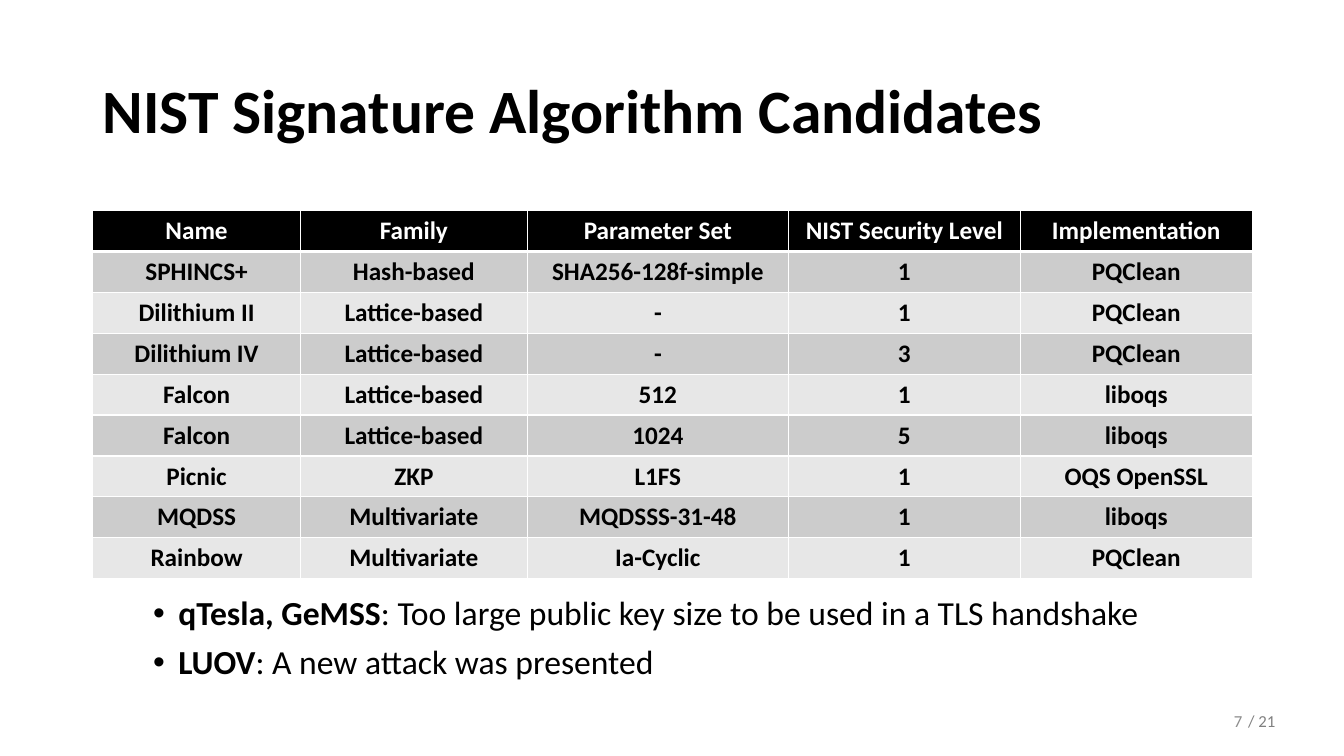
from lxml import etree
from pptx import Presentation
from pptx.dml.color import RGBColor
from pptx.enum.text import MSO_ANCHOR, PP_ALIGN
from pptx.oxml.ns import qn
from pptx.util import Inches, Pt

BLACK = RGBColor(0x00, 0x00, 0x00)
WHITE = RGBColor(0xFF, 0xFF, 0xFF)
DARK_BAND = RGBColor(0xCC, 0xCC, 0xCC)
LIGHT_BAND = RGBColor(0xE7, 0xE7, 0xE7)
PAGE_GRAY = RGBColor(0x8C, 0x8C, 0x8C)
TOTAL_GRAY = RGBColor(0x80, 0x80, 0x80)

CANDIDATES = [
    ("Name", "Family", "Parameter Set", "NIST Security Level", "Implementation"),
    ("SPHINCS+", "Hash-based", "SHA256-128f-simple", "1", "PQClean"),
    ("Dilithium II", "Lattice-based", "-", "1", "PQClean"),
    ("Dilithium IV", "Lattice-based", "-", "3", "PQClean"),
    ("Falcon", "Lattice-based", "512", "1", "liboqs"),
    ("Falcon", "Lattice-based", "1024", "5", "liboqs"),
    ("Picnic", "ZKP", "L1FS", "1", "OQS OpenSSL"),
    ("MQDSS", "Multivariate", "MQDSSS-31-48", "1", "liboqs"),
    ("Rainbow", "Multivariate", "Ia-Cyclic", "1", "PQClean"),
]
COLUMN_WIDTHS = [2.06, 2.25, 2.59, 2.3, 2.3]
EXCLUSIONS = [
    ("qTesla, GeMSS", ": Too large public key size to be used in a TLS handshake"),
    ("LUOV", ": A new attack was presented"),
]


def style(paragraph, size, color, bold=None):
    paragraph.font.name = "Calibri"
    paragraph.font.size = Pt(size)
    paragraph.font.color.rgb = color
    paragraph.font.bold = bold


def add_border(cell, side, width):
    """Add a solid white line to one side (L, R, T or B) of a cell."""
    line = etree.SubElement(cell._tc.get_or_add_tcPr(), qn(f"a:ln{side}"), w=str(Pt(width)))
    fill = etree.SubElement(line, qn("a:solidFill"))
    etree.SubElement(fill, qn("a:srgbClr"), val=str(WHITE))


presentation = Presentation()
presentation.slide_width = Inches(13.33)
presentation.slide_height = Inches(7.5)
slide = presentation.slides.add_slide(presentation.slide_layouts[6])

# Title
title = slide.shapes.add_textbox(Inches(0.92), Inches(0.4), Inches(11.5), Inches(1.45)).text_frame
title.word_wrap = True
title.vertical_anchor = MSO_ANCHOR.MIDDLE
heading = title.paragraphs[0]
heading.text = "NIST Signature Algorithm Candidates"
heading.line_spacing = 0.9
style(heading, 44, BLACK, True)

# Excluded candidates
exclusions = slide.shapes.add_textbox(
    Inches(0.92), Inches(5.88), Inches(11.5), Inches(1.02)).text_frame
exclusions.word_wrap = True
for index, (scheme, reason) in enumerate(EXCLUSIONS):
    bullet = exclusions.add_paragraph() if index else exclusions.paragraphs[0]
    bullet.line_spacing = Pt(25)
    bullet.space_before = Pt(10)
    properties = bullet._p.get_or_add_pPr()
    properties.set("marL", str(Inches(0.75)))
    properties.set("indent", str(Inches(-0.25)))
    etree.SubElement(properties, qn("a:buFont"), typeface="Arial")
    etree.SubElement(properties, qn("a:buChar"), char="•")
    style(bullet, 24, BLACK)
    for text, bold in ((scheme, True), (reason, False)):
        run = bullet.add_run()
        run.text = text
        run.font.bold = bold

# Page number and total
page = slide.shapes.add_textbox(Inches(9.42), Inches(6.95), Inches(3), Inches(0.4)).text_frame
page.word_wrap = True
page.vertical_anchor = MSO_ANCHOR.MIDDLE
page.paragraphs[0].text = "7"
page.paragraphs[0].alignment = PP_ALIGN.RIGHT
style(page.paragraphs[0], 12, PAGE_GRAY)

total = slide.shapes.add_textbox(Inches(12.28), Inches(7), Inches(0.48), Inches(0.3)).text_frame
total.word_wrap = False
total.paragraphs[0].text = "/ 21"
style(total.paragraphs[0], 12, TOTAL_GRAY)

# Candidate table
table = slide.shapes.add_table(
    len(CANDIDATES), len(COLUMN_WIDTHS),
    Inches(0.92), Inches(2.09), Inches(11.5), Inches(3.65)).table
for column, width in zip(table.columns, COLUMN_WIDTHS):
    column.width = Inches(width)
for row, values in enumerate(CANDIDATES):
    band = BLACK if row == 0 else DARK_BAND if row % 2 else LIGHT_BAND
    for column, value in enumerate(values):
        cell = table.cell(row, column)
        cell.vertical_anchor = MSO_ANCHOR.MIDDLE
        add_border(cell, "L", 1)
        add_border(cell, "R", 1)
        add_border(cell, "T", 3 if row == 1 else 1)
        add_border(cell, "B", 3 if row == 0 else 1)
        cell.fill.solid()
        cell.fill.fore_color.rgb = band
        entry = cell.text_frame.paragraphs[0]
        entry.text = value
        entry.alignment = PP_ALIGN.CENTER
        style(entry, 18, BLACK if row else WHITE, True)

presentation.save("out.pptx")
